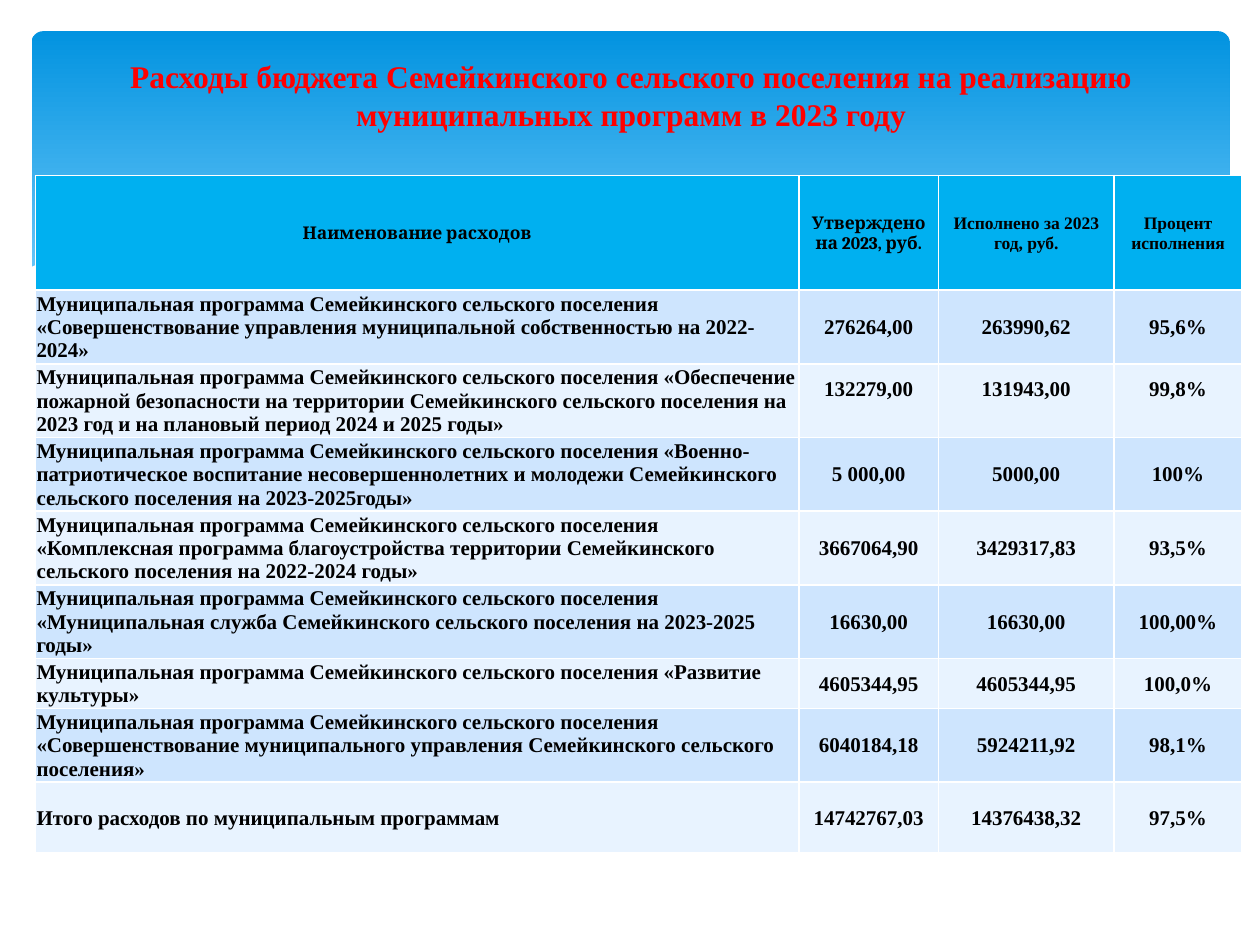
from lxml import etree
from pptx import Presentation
from pptx.dml.color import RGBColor
from pptx.enum.shapes import MSO_SHAPE
from pptx.enum.text import MSO_ANCHOR, PP_ALIGN
from pptx.oxml.ns import qn
from pptx.util import Inches, Pt

ROUNDED = MSO_SHAPE.ROUNDED_RECTANGLE
MIDDLE = MSO_ANCHOR.MIDDLE
LEFT, CENTER = PP_ALIGN.LEFT, PP_ALIGN.CENTER

W, H = Inches(10), Inches(7.5)
SERIF, HEAD_SERIF = "Times New Roman", "Cambria"
COLORS = {
    "banner_top": "0293E0", "banner_end": "83D3FE", "mist": "C6E7FC",
    "white": "FFFFFF", "head": "00B0F0", "odd": "CEE5FE", "even": "E8F3FF",
    "title": "FF0000", "text": "000000",
}

# Boxes are left, top, width, height as shares of the slide
BANNER = (0.025, 0.033, 0.951, 0.36)
WAVES = (0.023, 0.245, 0.954, 0.193)
TITLE = (0.051, 0.017, 0.9, 0.167)
TABLE = (0.028, 0.186, 0.958, 0.716)

# Wave points are percentages of the wave box: points, fill, opacity
WAVE_SHAPES = [
    ([(99.8, 11), (92.6, 20), (84.8, 32), (76.5, 44), (66.9, 56), (73, 61),
      (81.8, 65), (88, 63), (94.1, 56), (99.8, 43)], "mist", 29),
    ([(91.2, 61), (82.2, 52), (71.6, 39), (63.5, 26), (54.3, 13), (46.3, 5),
      (37.4, 1), (27.6, 5), (35.5, 13), (44.7, 26), (56.9, 44), (67.3, 57),
      (77.4, 64), (84.4, 65)], "mist", 40),
    ([(30, 8), (34.6, 3), (43, 2), (51, 6), (61.3, 14), (70.4, 24),
      (80.9, 39), (92.7, 61)], None, 100),
    ([(61.8, 50), (70.4, 35), (78.9, 22), (88.4, 10), (94.4, 4), (99.8, 1)],
     None, 100),
    ([(100, 43), (95, 54), (89.3, 61), (82.4, 64), (73.7, 61), (65.5, 54),
      (55.8, 42), (44.4, 25), (35.8, 12), (28.2, 4), (17.8, 0), (10, 2),
      (4.6, 9), (1.4, 16), (0, 20), (0, 100), (100, 100)], "white", 100),
]

COL_SHARES = [0.606, 0.111, 0.139, 0.102]
ROW_SHARES = [0.121] + [0.078] * 5 + [0.053, 0.078, 0.075]
HEADER = ["Наименование расходов", "Утверждено на 2023, руб.",
          "Исполнено за 2023 год, руб.", "Процент исполнения"]
PROGRAM = "Муниципальная программа Семейкинского сельского поселения "
PROGRAMS = [
    ("«Совершенствование управления муниципальной собственностью на 2022-2024»",
     "276264,00", "263990,62", "95,6%"),
    ("«Обеспечение пожарной безопасности на территории Семейкинского сельского "
     "поселения на 2023 год и на плановый период 2024 и 2025 годы»",
     "132279,00", "131943,00", "99,8%"),
    ("«Военно-патриотическое воспитание несовершеннолетних и молодежи "
     "Семейкинского сельского поселения на 2023-2025годы»",
     "5 000,00", "5000,00", "100%"),
    ("«Комплексная программа благоустройства территории Семейкинского сельского "
     "поселения на 2022-2024 годы»", "3667064,90", "3429317,83", "93,5%"),
    ("«Муниципальная служба Семейкинского сельского поселения на 2023-2025 годы»",
     "16630,00", "16630,00", "100,00%"),
    ("«Развитие культуры»", "4605344,95", "4605344,95", "100,0%"),
    ("«Совершенствование муниципального управления Семейкинского сельского "
     "поселения»", "6040184,18", "5924211,92", "98,1%"),
]
TOTAL = ("Итого расходов по муниципальным программам",
         "14742767,03", "14376438,32", "97,5%")
RAISED_ROW = 2  # its figures sit a little above the middle


def rgb(name):
    return RGBColor.from_string(COLORS[name])


def place(box):
    """Turn shares of the slide into lengths."""
    return [round(share * side) for share, side in zip(box, (W, H, W, H))]


def write(tf, text, size, color="text", font=SERIF, align=CENTER):
    p = tf.paragraphs[0]
    p.alignment = align
    r = p.add_run()
    r.text = text
    for key, value in {"size": Pt(size), "bold": True, "name": font}.items():
        setattr(r.font, key, value)
    r.font.color.rgb = rgb(color)


def add_banner(slide, box):
    sp = slide.shapes.add_shape(ROUNDED, *place(box))
    sp.adjustments[0] = 0.034
    sp.shadow.inherit = False
    sp.line.fill.background()
    sp.fill.gradient()
    sp.fill.gradient_angle = 270
    stops = [(0, "banner_top"), (0.9, "banner_end")]
    for stop, (position, color) in zip(sp.fill.gradient_stops, stops):
        stop.position = position
        stop.color.rgb = rgb(color)


def add_waves(slide, box):
    left, top, width, height = place(box)
    for points, fill, opacity in WAVE_SHAPES:
        spots = [(left + x * width / 100, top + y * height / 100)
                 for x, y in points]
        builder = slide.shapes.build_freeform(*spots[0])
        builder.add_line_segments(spots[1:], close=fill is not None)
        sp = builder.convert_to_shape()
        sp.shadow.inherit = False
        if fill is None:
            sp.fill.background()
            sp.line.color.rgb = rgb("white")
            sp.line.width = Pt(0)
            continue
        sp.line.fill.background()
        sp.fill.solid()
        sp.fill.fore_color.rgb = rgb(fill)
        if opacity < 100:
            color = sp.fill._xPr.find(".//" + qn("a:srgbClr"))
            etree.SubElement(color, qn("a:alpha")).set("val", str(opacity * 1000))


def add_title(slide, box):
    tf = slide.shapes.add_textbox(*place(box)).text_frame
    tf.word_wrap = True
    tf.vertical_anchor = MIDDLE
    write(tf, "Расходы бюджета Семейкинского сельского поселения на реализацию "
              "муниципальных программ в 2023 году", 18, "title")


def fill_cell(cell, text, row, col):
    body = row > 0
    cell.fill.solid()
    cell.fill.fore_color.rgb = rgb(("even", "odd")[row % 2] if body else "head")
    raised = row == RAISED_ROW and col > 0
    margins = {"margin_left": 0.01, "margin_right": 0.01, "margin_top": 0.01,
               "margin_bottom": 0.18 if raised else 0}
    for key, value in margins.items():
        setattr(cell, key, Inches(value))
    cell.vertical_anchor = MIDDLE
    write(cell.text_frame, text, 12 if body else 10,
          font=SERIF if body or col > 1 else HEAD_SERIF,
          align=LEFT if body and col == 0 else CENTER)


def add_budget_table(slide, box):
    rows = [HEADER, *[(PROGRAM + name, *sums) for name, *sums in PROGRAMS], TOTAL]
    table = slide.shapes.add_table(len(rows), len(HEADER), *place(box)).table
    for column, share in zip(table.columns, COL_SHARES):
        column.width = round(share * W)
    for row, share in zip(table.rows, ROW_SHARES):
        row.height = round(share * H)
    for i, texts in enumerate(rows):
        for j, text in enumerate(texts):
            fill_cell(table.cell(i, j), text, i, j)


def main():
    prs = Presentation()
    prs.slide_width, prs.slide_height = W, H
    slide = prs.slides.add_slide(prs.slide_layouts[6])
    add_banner(slide, BANNER)
    add_waves(slide, WAVES)
    add_budget_table(slide, TABLE)
    add_title(slide, TITLE)
    prs.save("out.pptx")


if __name__ == "__main__":
    main()
